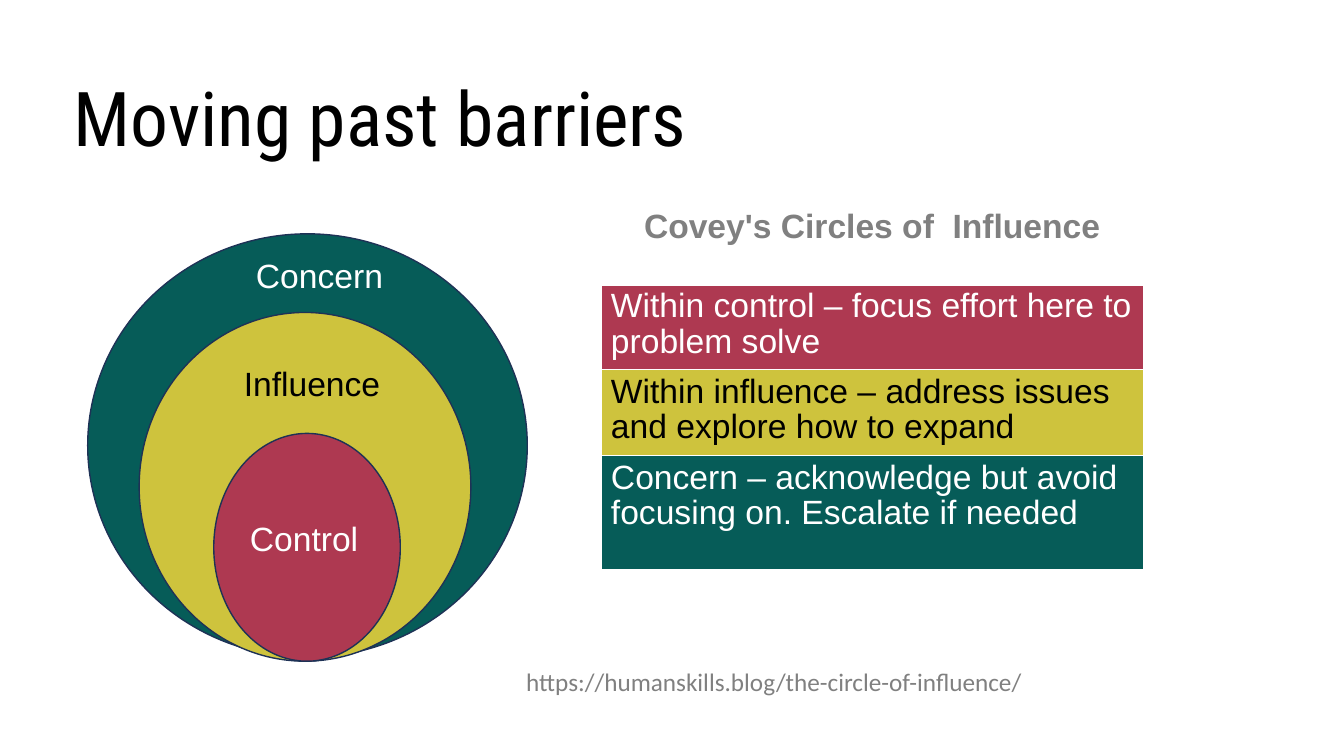
from lxml import etree
from pptx import Presentation
from pptx.dml.color import RGBColor
from pptx.enum.shapes import MSO_SHAPE
from pptx.enum.text import MSO_ANCHOR, PP_ALIGN
from pptx.oxml.ns import qn
from pptx.util import Inches, Pt

OVAL = MSO_SHAPE.OVAL
TOP = MSO_ANCHOR.TOP
LEFT, CENTER = PP_ALIGN.LEFT, PP_ALIGN.CENTER

HUES = {
    "teal": "065C58", "gold": "CEC33D", "red": "AE3951", "navy": "1E3256",
    "white": "FFFFFF", "black": "000000", "gray": "808080",
}
TITLE = "Moving past barriers"
RINGS = [
    ("teal", (0.87, 2.32, 4.36, 4.2)),
    ("gold", (1.38, 3.1, 3.29, 3.46)),
    ("red", (2.12, 4.3, 1.85, 2.26)),
]
LABELS = [
    ("Concern", (2.44, 2.48, 1.73, 0.5), "Arial", 24, "white"),
    ("Influence", (2.32, 3.55, 1.73, 0.47), "Arial", 24, "black"),
    ("Control", (2.38, 5.09, 1.73, 0.47), "Arial", 24, "white"),
    ("https://humanskills.blog/the-circle-of-influence/",
     (5.12, 6.56, 5.58, 0.4), "Calibri", 18, "gray"),
]
GRID = (5.96, 2.03, 5.38, 3.62)
ROWS = [
    ("Covey's Circles of  Influence", 0.79, None, "gray"),
    ("Within control – focus effort here to problem solve", 0.85, "red", "white"),
    ("Within influence – address issues and explore how to expand",
     0.85, "gold", "black"),
    ("Concern – acknowledge but avoid focusing on. Escalate if needed",
     1.13, "teal", "white"),
]


def rgb(hue):
    return RGBColor.from_string(HUES[hue])


def place(box):
    return [Inches(n) for n in box]


def write(frame, text, face, size, hue, bold=False, align=LEFT, gap=None):
    frame.text = text
    frame.word_wrap = True
    para = frame.paragraphs[0]
    para.alignment = align
    para.line_spacing = gap
    font = para.runs[0].font
    font.name, font.size, font.bold = face, Pt(size), bold
    font.color.rgb = rgb(hue)


def edge(cell, side, width):
    props = cell._tc.get_or_add_tcPr()
    line = etree.SubElement(props, qn("a:" + side), w=str(Pt(width)))
    fill = etree.SubElement(line, qn("a:solidFill"))
    etree.SubElement(fill, qn("a:srgbClr"), val=HUES["white"])


deck = Presentation()
deck.slide_width, deck.slide_height = Inches(13.33), Inches(7.5)
slide = deck.slides.add_slide(deck.slide_layouts[5])
shapes = slide.shapes

title = shapes.title
title.left, title.top, title.width, title.height = place((0.63, 0.76, 11.5, 1.07))
write(title.text_frame, TITLE, "Roboto Condensed", 54, "black", gap=0.9)
title.text_frame.vertical_anchor = TOP

table = shapes.add_table(len(ROWS), 1, *place(GRID)).table
for i, (text, height, fill, hue) in enumerate(ROWS):
    table.rows[i].height = Inches(height)
    cell = table.cell(i, 0)
    head = i == 0
    write(cell.text_frame, text, "Arial", 24, hue, head,
          CENTER if head else LEFT, 0.95)
    for side in ("lnL", "lnR", "lnT", "lnB"):
        edge(cell, side, 3 if head and side == "lnB" else 1)
    if fill:
        cell.fill.solid()
        cell.fill.fore_color.rgb = rgb(fill)
    else:
        cell.fill.background()

for hue, box in RINGS:
    ring = shapes.add_shape(OVAL, *place(box))
    ring.shadow.inherit = False
    ring.fill.solid()
    ring.fill.fore_color.rgb = rgb(hue)
    ring.line.color.rgb = rgb("navy")
    ring.line.width = Pt(1)

for text, box, face, size, hue in LABELS:
    label = shapes.add_textbox(*place(box))
    write(label.text_frame, text, face, size, hue)

deck.save("out.pptx")
